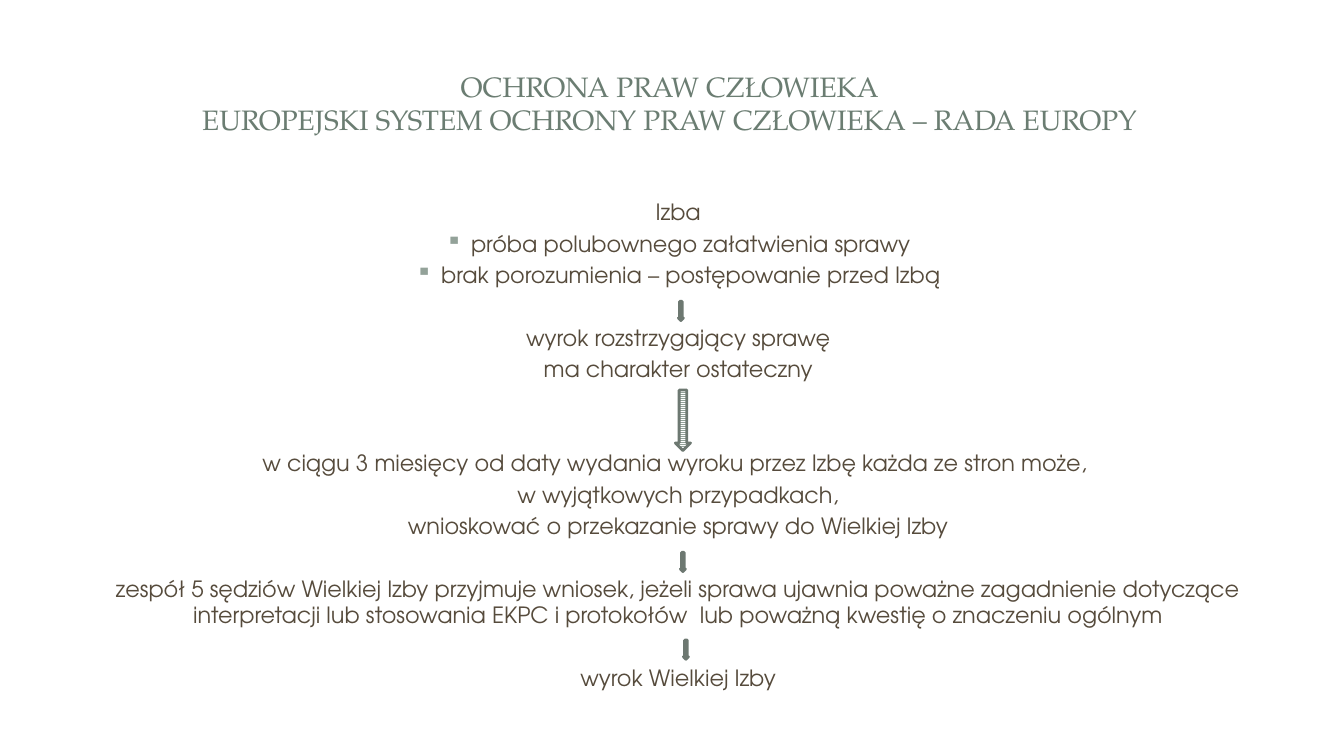
from lxml import etree
from pptx import Presentation, util as u
from pptx.dml.color import RGBColor
from pptx.enum import dml, shapes, text
from pptx.oxml.ns import qn

Pt = u.Pt
GREEN, OUTLINE, BROWN = "93A299", "6D7871", "564B3C"
LINE_GAP = 3.2      # 20% of the 16 pt text
BLANK_LINE = 22.4   # one text line with its gap


def color(hex_code):
    return RGBColor.from_string(hex_code)


def add_span(para, words, font, size, hex_code):
    span = para.add_run()
    span.text = words
    span.font.name = font
    span.font.size = Pt(size)
    span.font.color.rgb = color(hex_code)


deck = Presentation()
deck.slide_width, deck.slide_height = Pt(960), Pt(540)
page = deck.slides.add_slide(deck.slide_layouts[6])

# Title
title_box = page.shapes.add_textbox(Pt(44.64), Pt(32.4), Pt(867.6), Pt(82.08))
title_box.text_frame.word_wrap = True
title_box.text_frame.vertical_anchor = text.MSO_ANCHOR.MIDDLE
para = title_box.text_frame.paragraphs[0]
para.alignment = text.PP_ALIGN.CENTER
add_span(para, "OCHRONA PRAW CZŁOWIEKA", "TeX Gyre Pagella", 20, "6B7D72")
para.add_line_break()
add_span(para, "EUROPEJSKI SYSTEM OCHRONY PRAW CZŁOWIEKA – RADA EUROPY",
         "TeX Gyre Pagella", 20, "6B7D72")

# Stages of the procedure: wording, bulleted, lines left free above for an arrow
stages = [
    ("Izba", False, 0),
    ("próba polubownego załatwienia sprawy", True, 0),
    ("brak porozumienia – postępowanie przed Izbą", True, 0),
    ("wyrok rozstrzygający sprawę", False, 1),
    ("ma charakter ostateczny", False, 0),
    ("w ciągu 3 miesięcy od daty wydania wyroku przez Izbę każda ze stron może, ", False, 2),
    ("w wyjątkowych przypadkach,", False, 0),
    ("wnioskować o przekazanie sprawy do Wielkiej Izby", False, 0),
    ("zespół 5 sędziów Wielkiej Izby przyjmuje wniosek, jeżeli sprawa ujawnia "
     "poważne zagadnienie dotyczące interpretacji lub stosowania EKPC i protokołów  "
     "lub poważną kwestię o znaczeniu ogólnym", False, 1),
    ("wyrok Wielkiej Izby", False, 1),
]
stages_box = page.shapes.add_textbox(Pt(48), Pt(138.24), Pt(864), Pt(378.72))
frame = stages_box.text_frame
frame.word_wrap = True
for index, (words, bulleted, free_lines) in enumerate(stages):
    para = frame.add_paragraph() if index else frame.paragraphs[0]
    para.alignment = text.PP_ALIGN.CENTER
    para.space_before = Pt(LINE_GAP + free_lines * BLANK_LINE if index else 0)
    properties = para._p.get_or_add_pPr()
    properties.set("marL", str(Pt(27 if bulleted else 9)))
    properties.set("indent", str(Pt(-18 if bulleted else 0)))
    if bulleted:
        bullet_color = etree.SubElement(properties, qn("a:buClr"))
        etree.SubElement(bullet_color, qn("a:srgbClr"), val=GREEN)
        etree.SubElement(properties, qn("a:buChar"), char="▪")
    add_span(para, words, "TeX Gyre Adventor", 16, BROWN)

# Arrows between the stages: left, top, width, height, striped
arrows = [
    (484.56, 215.28, 3.6, 13.68, False),
    (482.4, 278.64, 10.8, 43.2, True),
    (486, 394.56, 3.6, 13.68, False),
    (488.16, 457.2, 3.6, 13.68, False),
]
for left, top, width, height, striped in arrows:
    arrow = page.shapes.add_shape(shapes.MSO_SHAPE.DOWN_ARROW,
                                  Pt(left), Pt(top), Pt(width), Pt(height))
    arrow.shadow.inherit = False
    if striped:
        arrow.fill.patterned()
        arrow.fill.pattern = dml.MSO_PATTERN.NARROW_HORIZONTAL
        arrow.fill.back_color.rgb = color("FFFFFF")
    else:
        arrow.fill.solid()
    arrow.fill.fore_color.rgb = color(GREEN)
    arrow.line.color.rgb = color(OUTLINE)
    arrow.line.width = Pt(2)

deck.save("out.pptx")
